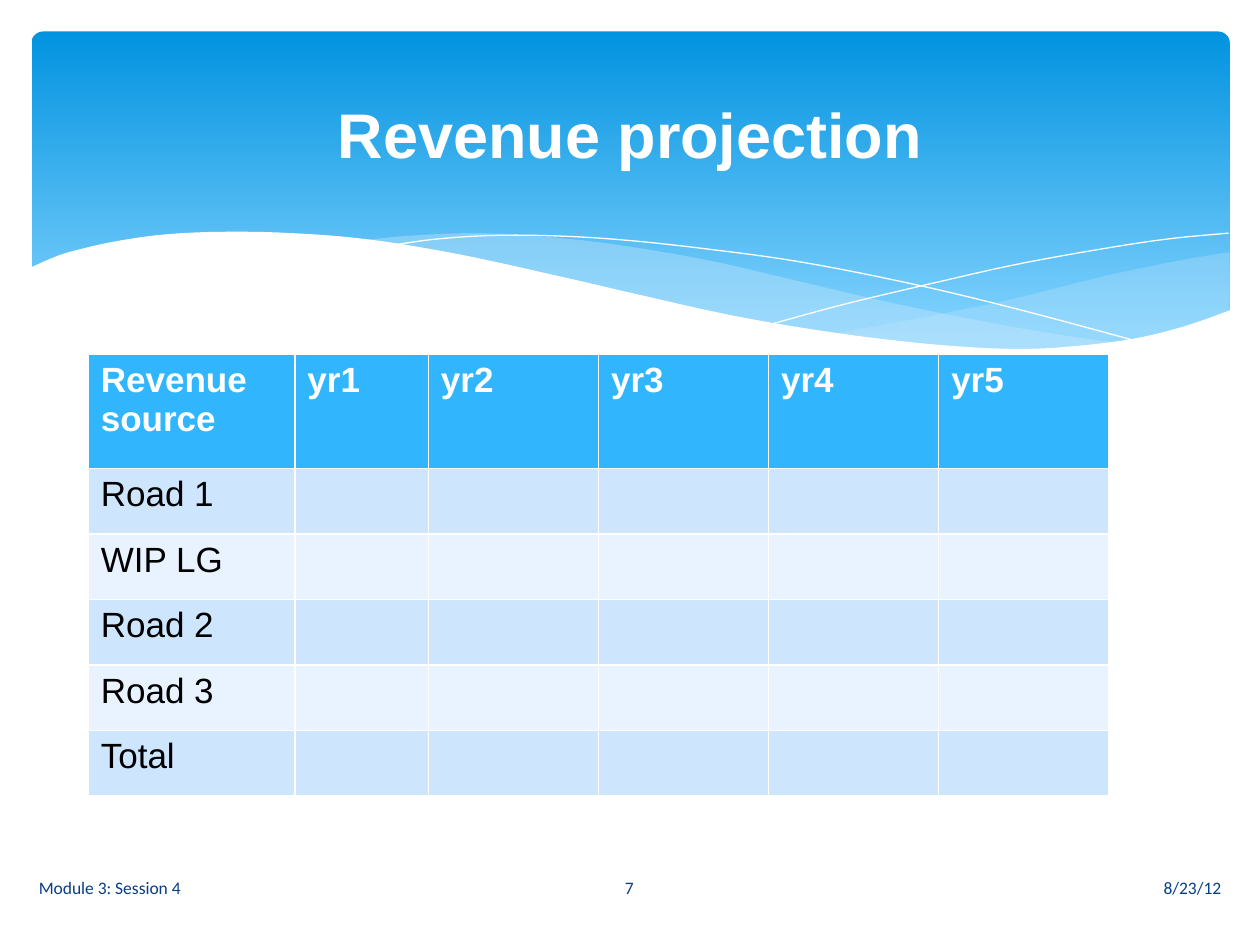
from pptx import Presentation
from pptx.dml.color import RGBColor
from pptx.enum.shapes import MSO_SHAPE
from pptx.enum.text import MSO_ANCHOR, PP_ALIGN
from pptx.oxml.ns import qn
from pptx.util import Inches, Pt
from lxml.etree import SubElement

WHITE = RGBColor(0xFF, 0xFF, 0xFF)
BLACK = RGBColor(0x00, 0x00, 0x00)
NAVY = RGBColor(0x07, 0x3E, 0x87)
DEEP = RGBColor(0x02, 0x93, 0xE0)
SKY = RGBColor(0x83, 0xD3, 0xFE)
MIST = RGBColor(0xC6, 0xE7, 0xFC)
HEAD = RGBColor(0x31, 0xB6, 0xFD)
BANDS = RGBColor(0xE8, 0xF3, 0xFF), RGBColor(0xCE, 0xE5, 0xFE)

COLS, ROWS = 100, 75
STEPS = 6


def spline(knots):
    """Return points on a Catmull-Rom curve through the knots."""
    ends = [knots[0], *knots, knots[-1]]
    curve = [knots[0]]
    for a, b, c, d in zip(ends, ends[1:], ends[2:], ends[3:]):
        for step in range(1, STEPS + 1):
            t = step / STEPS
            curve.append(tuple(
                q + t / 2 * (r - p + t * (2 * p - 5 * q + 4 * r - s
                                          + t * (3 * q - p - 3 * r + s)))
                for p, q, r, s in zip(a, b, c, d)))
    return curve


class Deck:
    """Style and current slide; lengths are columns and rows of the grid."""

    def __init__(self):
        self.show = Presentation()
        self.show.slide_width, self.show.slide_height = Inches(10), Inches(7.5)
        self.col = self.show.slide_width / COLS
        self.row = self.show.slide_height / ROWS
        self.slide = self.show.slides.add_slide(self.show.slide_layouts[6])
        self.shapes = self.slide.shapes

    def spot(self, x, y):
        return round(x * self.col), round(y * self.row)

    def box(self, x, y, w, h):
        return *self.spot(x, y), *self.spot(w, h)

    def style(self, para, size, color, font="Arial", bold=False):
        para.font.size, para.font.name = Pt(size), font
        para.font.bold = bold
        para.font.color.rgb = color

    def panel(self, *box):
        shape = self.shapes.add_shape(MSO_SHAPE.ROUNDED_RECTANGLE, *self.box(*box))
        shape.adjustments[0] = 0.034
        shape.shadow.inherit = False
        shape.line.fill.background()
        shape.fill.gradient()
        shape.fill.gradient_angle = 270
        for stop, color, place in zip(shape.fill.gradient_stops, (DEEP, SKY), (0, 0.9)):
            stop.color.rgb, stop.position = color, place

    def trace(self, points, close):
        spots = [self.spot(*point) for point in points]
        path = self.shapes.build_freeform(*spots[0])
        path.add_line_segments(spots[1:], close=close)
        shape = path.convert_to_shape()
        shape.shadow.inherit = False
        return shape

    def wave(self, *edges, color=MIST, alpha=100):
        """Fill the area bounded by smooth edges; alpha is percent opacity."""
        shape = self.trace([p for edge in edges for p in spline(edge)], True)
        shape.line.fill.background()
        shape.fill.solid()
        shape.fill.fore_color.rgb = color
        if alpha < 100:
            tint = shape.fill._xPr.find(".//" + qn("a:srgbClr"))
            SubElement(tint, qn("a:alpha"), val=str(alpha * 1000))

    def thread(self, knots):
        shape = self.trace(spline(knots), False)
        shape.fill.background()
        shape.line.color.rgb = WHITE
        shape.line.width = Pt(0)

    def text(self, words, *box, align=PP_ALIGN.LEFT, **style):
        frame = self.shapes.add_textbox(*self.box(*box)).text_frame
        frame.word_wrap = True
        frame.vertical_anchor = MSO_ANCHOR.MIDDLE
        para = frame.paragraphs[0]
        para.text, para.alignment = words, align
        self.style(para, **style)

    def table(self, x, y, widths, heights, heads, names):
        grid = self.shapes.add_table(
            len(heights), len(widths),
            *self.box(x, y, sum(widths), sum(heights))).table
        for column, width in zip(grid.columns, widths):
            column.width = round(width * self.col)
        for line, height in zip(grid.rows, heights):
            line.height = round(height * self.row)
        body = [[name] + [""] * (len(heads) - 1) for name in names]
        for r, texts in enumerate([heads, *body]):
            for c, words in enumerate(texts):
                cell = grid.cell(r, c)
                cell.fill.solid()
                cell.fill.fore_color.rgb = BANDS[r % 2] if r else HEAD
                if words:
                    cell.text = words
                    self.style(cell.text_frame.paragraphs[0], 20,
                               BLACK if r else WHITE, bold=not r)


def main():
    deck = Deck()
    deck.panel(2.5, 2.5, 95.1, 27)

    deck.wave([(97.6, 20), (93.5, 20.7), (89.1, 21.6), (86.1, 22.3), (80.5, 23.7),
               (75.3, 24.8), (70.6, 25.7), (66.1, 26.5)],
              [(66.1, 26.5), (70.5, 27.1), (74.5, 27.5), (78.1, 27.7), (82.4, 27.7),
               (86.3, 27.5), (89.7, 27), (93.5, 26.2), (97.6, 24.7)], alpha=29)
    deck.wave([(89.3, 27.3), (83.7, 26.5), (77.5, 25.4), (70.6, 24), (62.9, 22.2),
               (56.9, 20.8), (51.4, 19.8), (46.5, 19.1), (42, 18.7), (38, 18.5),
               (34.4, 18.6), (31.3, 18.8), (28.6, 19.1)],
              [(28.6, 19.1), (34.2, 19.9), (40.4, 21.1), (44.9, 22.2), (53, 24),
               (60.1, 25.5), (66.5, 26.6), (72.2, 27.4), (77.3, 27.7), (81.8, 27.8),
               (85.7, 27.7), (89.3, 27.3)], alpha=40)

    deck.thread([(30.9, 19.5), (34.4, 19), (38.7, 18.7), (43.3, 18.7), (48.9, 19),
                 (55.6, 19.7), (63.6, 20.8), (72.7, 22.6), (81, 24.6), (90.7, 27.2)])
    deck.thread([(61.3, 25.7), (67.2, 24.1), (74.8, 22.3), (80.6, 21), (86.6, 19.9),
                 (92.4, 19), (97.5, 18.5)])

    deck.wave([(97.7, 24.6), (94, 25.9), (89.9, 26.9), (85, 27.5), (80.9, 27.7),
               (76.1, 27.5), (70.8, 27), (64.8, 26.2), (57.9, 25), (50.3, 23.3),
               (44.7, 22), (36.5, 20.2), (29.2, 19), (23, 18.5), (17.7, 18.4),
               (13.2, 18.6), (9.5, 19.1), (6.7, 19.7), (4.6, 20.3), (2.3, 21.3)],
              [(2.3, 32.9), (97.7, 32.9)], color=WHITE)

    deck.table(7, 28.1, [16.4, 10.6] + [13.5] * 4, [9.1] + [5.2] * 5,
               ["Revenue source"] + [f"yr{n}" for n in range(1, 6)],
               ["Road 1", "WIP LG", "Road 2", "Road 3", "Total"])

    deck.text("Revenue projection", 5, 3.7, 90, 13.7, align=PP_ALIGN.CENTER,
              size=36, color=WHITE, bold=True)
    for words, x, width, align in (
            ("8/23/12", 56.5, 41.4, PP_ALIGN.RIGHT),
            ("Module 3: Session 4", 2.1, 41.4, PP_ALIGN.LEFT),
            ("7", 43.6, 12.7, PP_ALIGN.CENTER)):
        deck.text(words, x, 68.4, width, 4, align=align,
                  size=10, color=NAVY, font="Calibri")

    deck.show.save("out.pptx")


if __name__ == "__main__":
    main()
